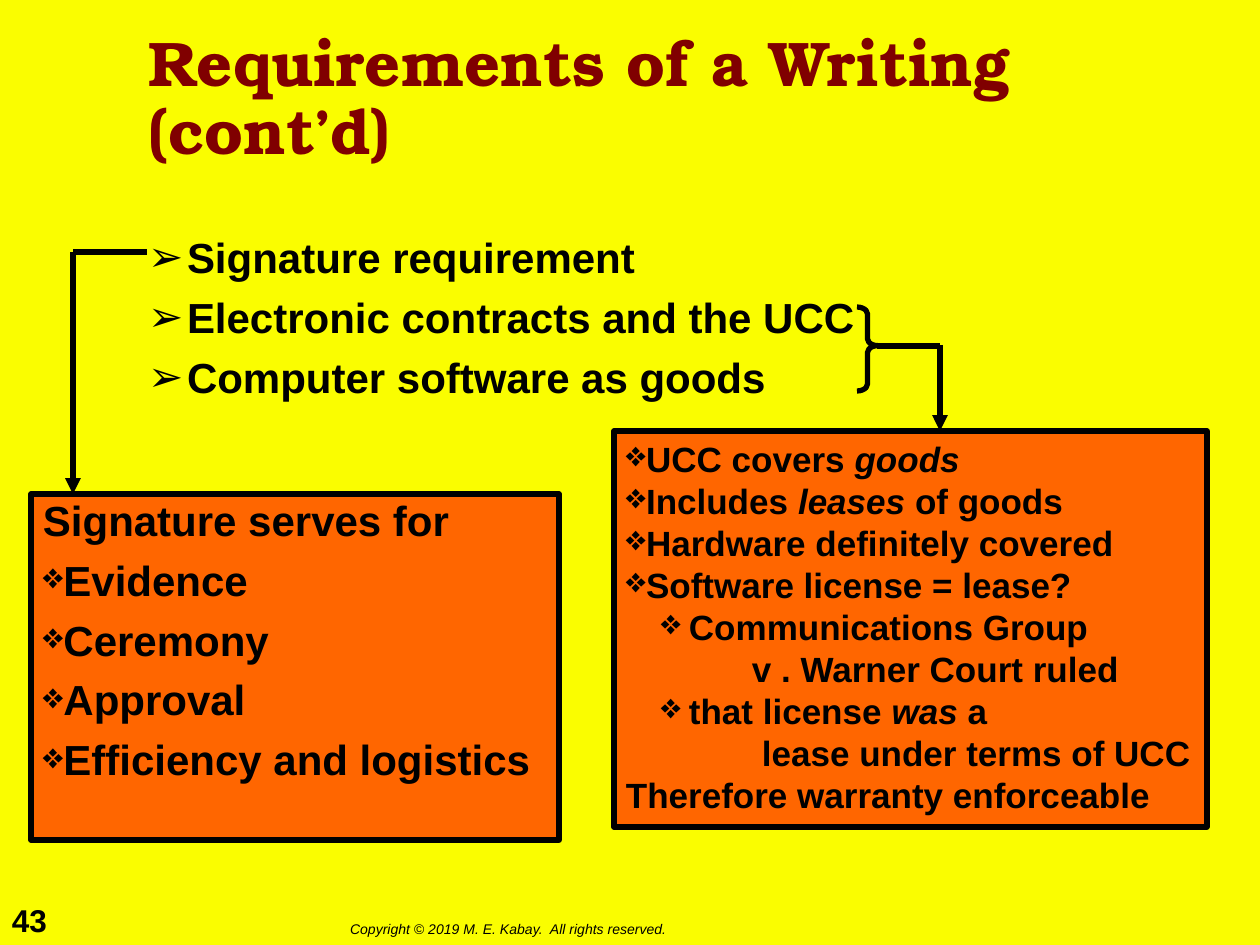
from pptx import Presentation
from pptx.dml.color import RGBColor
from pptx.enum.shapes import MSO_CONNECTOR, MSO_SHAPE
from pptx.enum.text import MSO_ANCHOR, MSO_AUTO_SIZE, PP_ALIGN
from pptx.oxml.ns import qn
from pptx.util import Pt
from lxml import etree

RECT, BRACE = MSO_SHAPE.RECTANGLE, MSO_SHAPE.RIGHT_BRACE
STRAIGHT = MSO_CONNECTOR.STRAIGHT
TOP, MIDDLE, LEFT = MSO_ANCHOR.TOP, MSO_ANCHOR.MIDDLE, PP_ALIGN.LEFT
NO_FIT = MSO_AUTO_SIZE.NONE

YELLOW = RGBColor(0xFA, 0xFD, 0x00)
MAROON = RGBColor(0x80, 0x00, 0x00)
ORANGE = RGBColor(0xFF, 0x66, 0x00)
BLACK = RGBColor(0x00, 0x00, 0x00)

SCALE = 914400 / 126
ARROW, DIAMOND = "➢", "❖"


def px(n):
    return round(n * SCALE)


class Board:
    """Holds the style and the current slide."""
    font, head = "Arial", "TeX Gyre Bonum"
    stroke = Pt(3)

    def __init__(self, deck):
        self.slide = deck.slides.add_slide(deck.slide_layouts[1])
        fill = self.slide.background.fill
        fill.solid()
        fill.fore_color.rgb = YELLOW

    def place(self, shape, box):
        shape.left, shape.top, shape.width, shape.height = map(px, box)

    def frame(self, shape, anchor=TOP, right=12, wrap=True):
        frame = shape.text_frame
        frame.word_wrap = wrap
        frame.auto_size = NO_FIT
        frame.vertical_anchor = anchor
        frame.margin_left, frame.margin_right = px(12), px(right)
        frame.margin_top = frame.margin_bottom = px(6)
        return frame

    def para(self, frame, text, size, bullet=None, indent=(0, 0), share=100,
             lead=0.9, gap=0, font=None, color=BLACK, bold=True, slant=False):
        """Add a paragraph; parts between asterisks are italic."""
        first = not frame.paragraphs[0].runs
        par = frame.paragraphs[0] if first else frame.add_paragraph()
        props = par._p.get_or_add_pPr()
        props.set("marL", str(px(indent[0])))
        props.set("indent", str(px(indent[1])))
        if bullet:
            tint = etree.SubElement(props, qn("a:buClr"))
            etree.SubElement(tint, qn("a:srgbClr"), val=str(BLACK))
            etree.SubElement(props, qn("a:buSzPct"), val=str(share * 1000))
            etree.SubElement(props, qn("a:buChar"), char=bullet)
        else:
            etree.SubElement(props, qn("a:buNone"))
        par.alignment = LEFT
        par.line_spacing = lead
        par.space_before = Pt(0 if first else gap)
        par.space_after = Pt(0)
        for i, part in enumerate(text.split("*")):
            if part:
                run = par.add_run()
                run.text = part
                run.font.name = font or self.font
                run.font.size = Pt(size)
                run.font.bold = bold
                run.font.italic = slant or i % 2 == 1
                run.font.color.rgb = color

    def title(self, text, box):
        shape = self.slide.shapes.title
        self.place(shape, box)
        self.para(self.frame(shape, MIDDLE), text, 36,
                  font=self.head, color=MAROON)

    def body(self, items, box):
        shape = self.slide.placeholders[1]
        self.place(shape, box)
        frame = self.frame(shape)
        for item in items:
            self.para(frame, item, 24, ARROW, (39, -39), gap=8.3)

    def label(self, text, box, size, **style):
        shape = self.slide.shapes.add_textbox(*map(px, box))
        self.para(self.frame(shape, wrap=False), text, size, lead=1.0, **style)

    def shape(self, kind, box):
        shape = self.slide.shapes.add_shape(kind, *map(px, box))
        shape.shadow.inherit = False
        shape.line.color.rgb = BLACK
        shape.line.width = self.stroke
        return shape

    def panel(self, box):
        """Draw an orange box and return its text frame."""
        shape = self.shape(RECT, box)
        shape.fill.solid()
        shape.fill.fore_color.rgb = ORANGE
        return self.frame(shape, right=0)

    def brace(self, box):
        shape = self.shape(BRACE, box)
        shape.fill.background()
        shape.adjustments[0], shape.adjustments[1] = 0.33, 0.46

    def line(self, start, end, arrow=False):
        line = self.slide.shapes.add_connector(
            STRAIGHT, *map(px, start + end))
        line.line.color.rgb = BLACK
        line.line.width = self.stroke
        if arrow:
            etree.SubElement(line.line._get_or_add_ln(), qn("a:tailEnd"),
                             type="triangle")
        etree.SubElement(line._element.spPr, qn("a:effectLst"))


def main():
    deck = Presentation()
    deck.slide_width, deck.slide_height = px(1260), px(945)
    board = Board(deck)

    board.label("43", (0, 895, 64, 50), 18)
    board.label("Copyright © 2019 M. E. Kabay.  All rights reserved.",
                (338, 915, 348, 30), 8, bold=False, slant=True)
    board.title("Requirements of a Writing (cont’d)", (136, 21, 987, 158))
    board.body(["Signature requirement", "Electronic contracts and the UCC",
                "Computer software as goods"], (136, 231, 987, 640))

    serves = board.panel((31, 494, 528, 346))
    board.para(serves, "Signature serves for", 24)
    for item in ("Evidence", "Ceremony", "Approval",
                 "Efficiency and logistics"):
        board.para(serves, item, 24, DIAMOND, share=85, gap=8.3)
    board.line((147, 252), (73, 252))
    board.line((73, 252), (73, 494), arrow=True)

    goods = board.panel((614, 431, 593, 396))
    sub = (63, -28)
    for text, bullet, indent in (
            ("UCC covers *goods*", DIAMOND, (0, 0)),
            ("Includes *leases* of goods", DIAMOND, (0, 0)),
            ("Hardware definitely covered", DIAMOND, (0, 0)),
            ("Software license = lease?", DIAMOND, (0, 0)),
            ("Communications Group", DIAMOND, sub),
            ("v . Warner Court ruled", None, (126, 0)),
            ("that license *was* a", DIAMOND, sub),
            ("lease under terms of UCC", None, (136, 0)),
            ("Therefore warranty enforceable", None, (0, 0))):
        board.para(goods, text, 20, bullet, indent, lead=Pt(24))
    board.brace((857, 307, 21, 84))
    board.line((877, 346), (940, 346))
    board.line((940, 345), (940, 431), arrow=True)

    deck.save("out.pptx")


if __name__ == "__main__":
    main()
